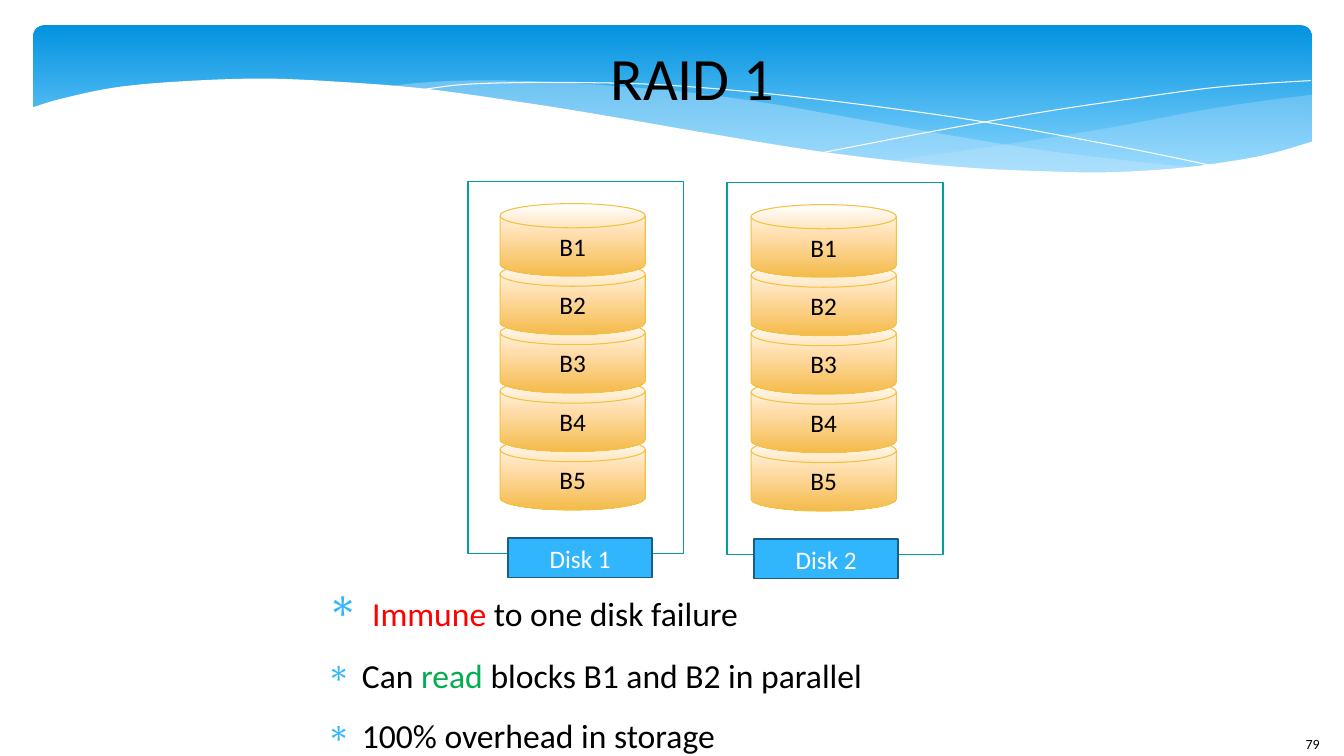
import pptx
import pptx.dml.color
import pptx.enum.shapes
import pptx.enum.text
import pptx.oxml
import pptx.oxml.ns
import pptx.util
from pptx.util import Inches

SHAPE = pptx.enum.shapes.MSO_SHAPE
ALIGN = pptx.enum.text.PP_ALIGN
ANCHOR = pptx.enum.text.MSO_ANCHOR
FONT = "Calibri"

VEILS = [
    (29, [[(12.68, .69), (12.13, .76), (11.55, .85), (10.77, 1), (10.05, 1.12), (9.39, 1.22),
           (8.49, 1.35)],
          [(8.49, 1.35), (9.07, 1.4), (9.76, 1.45), (10.38, 1.47), (10.93, 1.46), (11.53, 1.41),
           (12.05, 1.33), (12.68, 1.17)]]),
    (40, [[(11.57, 1.42), (10.83, 1.34), (10.01, 1.24), (9.08, 1.09), (8.06, .91), (7.26, .77),
           (6.53, .67), (5.86, .61), (5.27, .57), (4.73, .55), (4.26, .55), (3.85, .57), (3.49, .61)],
          [(3.49, .61), (4.23, .69), (5.06, .81), (5.66, .91), (6.73, 1.1), (7.69, 1.25),
           (8.54, 1.36), (9.3, 1.43), (9.97, 1.47), (10.57, 1.48), (11.1, 1.46), (11.57, 1.42)]]),
]
STRANDS = [
    [(3.79, .65), (4.25, .59), (4.83, .57), (5.44, .57), (6.19, .59), (7.09, .66), (8.15, .78),
     (9.37, .95), (10.75, 1.2), (11.77, 1.41)],
    [(7.85, 1.26), (8.94, 1.05), (10.02, .86), (10.82, .74), (11.61, .63), (12.17, .58), (12.67, .55)],
]
WAVE = [
    [(-.02, .82), (.28, .73), (.8, .62), (1.43, .56), (2.25, .53), (3, .56), (3.88, .63), (4.88, .77),
     (5.63, .89), (6.73, 1.08), (7.71, 1.24), (8.58, 1.35), (9.36, 1.42), (10.04, 1.45),
     (10.64, 1.46), (11.34, 1.42), (11.94, 1.34), (12.33, 1.26), (12.7, 1.15)],
    [(12.7, 1.99), (-.02, 1.99)],
]
POINTS = [
    [(" ", None, 32), ("Immune ", "FF0000", 24), ("to one disk failure", None, 24)],
    [("Can ", None, 24), ("read", "00B050", 24), (" blocks B1 and B2 in parallel", None, 24)],
    [("100% overhead in storage", None, 24)],
]


def rgb(value):
    """Turn a hex string into a colour."""
    return pptx.dml.color.RGBColor.from_string(value)


def fill_solid(shape, color, opacity=100):
    """Fill a shape with one colour, at a given opacity in percent."""
    shape.fill.solid()
    shape.fill.fore_color.rgb = rgb(color)
    if opacity < 100:
        tint = shape.element.spPr.find(".//" + pptx.oxml.ns.qn("a:srgbClr"))
        alpha = pptx.oxml.parse_xml(f'<a:alpha {pptx.oxml.ns.nsdecls("a")} val="{opacity * 1000}"/>')
        tint.append(alpha)


def fill_gradient(shape, stops):
    """Fill a shape from top to bottom with (percent, colour) stops."""
    shape.fill.gradient()
    shape.fill.gradient_angle = 270
    stop_list = shape.element.spPr.find(".//" + pptx.oxml.ns.qn("a:gsLst"))
    for old in list(stop_list):
        stop_list.remove(old)
    for percent, color in stops:
        stop_list.append(pptx.oxml.parse_xml(
            f'<a:gs {pptx.oxml.ns.nsdecls("a")} pos="{percent * 1000}"><a:srgbClr val="{color}"/></a:gs>'))


def outline(shape, color=None, width=0):
    """Set or remove the line of a shape and drop its shadow."""
    shape.shadow.inherit = False
    if color is None:
        shape.line.fill.background()
    else:
        shape.line.color.rgb = rgb(color)
        shape.line.width = pptx.util.Pt(width)


def style(paragraph, size, color="000000"):
    """Set the font of a whole paragraph."""
    paragraph.font.name = FONT
    paragraph.font.size = pptx.util.Pt(size)
    paragraph.font.color.rgb = rgb(color)


def add_preset(slide, kind, left, top, width, height):
    """Add a preset shape at a place in inches."""
    return slide.shapes.add_shape(kind, Inches(left), Inches(top), Inches(width), Inches(height))


def caption(shape, text, color):
    """Centre a label in a shape."""
    shape.text_frame.text = text
    shape.text_frame.vertical_anchor = ANCHOR.MIDDLE
    label = shape.text_frame.paragraphs[0]
    label.alignment = ALIGN.CENTER
    style(label, 18, color)


def smooth(knots, steps=6):
    """Run a Catmull-Rom curve through the knots."""
    padded = [knots[0], *knots, knots[-1]]
    curve = [knots[0]]
    for a, b, c, d in zip(padded, padded[1:], padded[2:], padded[3:]):
        for step in range(1, steps + 1):
            t = step / steps
            curve.append(tuple(
                (2 * q + (r - p) * t + (2 * p - 5 * q + 4 * r - s) * t ** 2
                 + (3 * q - p - 3 * r + s) * t ** 3) / 2
                for p, q, r, s in zip(a, b, c, d)))
    return curve


def add_curve(slide, left, top, curves, close=True):
    """Add an outline made of smooth curves, offset from the given corner."""
    spots = [(Inches(left + x), Inches(top + y)) for knots in curves for x, y in smooth(knots)]
    builder = slide.shapes.build_freeform(*spots[0])
    builder.add_line_segments(spots[1:], close=close)
    return builder.convert_to_shape()


def add_banner(slide, left, top, width, height):
    """Draw the blue banner with its veils, strands and white wave."""
    sky = add_preset(slide, SHAPE.ROUNDED_RECTANGLE, left, top, width, height)
    sky.adjustments[0] = 0.07
    fill_gradient(sky, [(0, "0293E0"), (90, "83D3FE")])
    outline(sky)
    for opacity, curves in VEILS:
        veil = add_curve(slide, left, top, curves)
        fill_solid(veil, "C6E7FC", opacity)
        outline(veil)
    for knots in STRANDS:
        strand = add_curve(slide, left, top, [knots], close=False)
        strand.fill.background()
        outline(strand, "FFFFFF")
    wave = add_curve(slide, left, top, WAVE)
    fill_solid(wave, "FFFFFF")
    outline(wave)


def add_title(slide, left, top, width, height):
    """Place the title in front of the banner."""
    title = slide.shapes.title
    title.element.getparent().append(title.element)
    title.left, title.top, title.width, title.height = map(Inches, (left, top, width, height))
    frame = title.text_frame
    frame.text = "RAID 1"
    frame.margin_left = frame.margin_right = frame.margin_top = frame.margin_bottom = 0
    frame.vertical_anchor = ANCHOR.MIDDLE
    frame.paragraphs[0].alignment = ALIGN.CENTER
    style(frame.paragraphs[0], 42.9)


def add_disk(slide, name, left, top, width, height, stack_inset, label_inset):
    """Draw a framed disk with its five blocks and name."""
    frame = add_preset(slide, SHAPE.FLOWCHART_PROCESS, left, top, width, height)
    fill_solid(frame, "FFFFFF")
    outline(frame, "049E9B", 1.25)
    for number in range(5, 0, -1):
        block = add_preset(slide, SHAPE.FLOWCHART_MAGNETIC_DISK, left + stack_inset,
                           top + 0.22 + 0.58 * (number - 1), 1.44, 0.72)
        fill_gradient(block, [(0, "FFFFFF"), (44, "FFDDAA"), (100, "F4BB4A")])
        outline(block, "F5C040", 0.75)
        caption(block, f"B{number}", "000000")
    plate = add_preset(slide, SHAPE.FLOWCHART_PROCESS, left + label_inset, top + height - 0.15, 1.43, 0.39)
    fill_solid(plate, "31B6FD")
    outline(plate, "195F84", 1.25)
    caption(plate, name, "FFFFFF")


def add_points(slide, left, top, width, height):
    """Write the bulleted remarks."""
    frame = slide.shapes.add_textbox(*map(Inches, (left, top, width, height))).text_frame
    frame.word_wrap = True
    frame.margin_left = frame.margin_right = frame.margin_top = frame.margin_bottom = 0
    for index, pieces in enumerate(POINTS):
        point = frame.add_paragraph() if index else frame.paragraphs[0]
        point.space_after = pptx.util.Pt(14.1)
        settings = point._p.get_or_add_pPr()
        settings.set("marL", str(Inches(0.47)))
        settings.set("indent", str(Inches(-0.35)))
        for bullet in ('<a:buClr {}><a:srgbClr val="31B6FD"/></a:buClr>', '<a:buChar {} char="∗"/>'):
            settings.append(pptx.oxml.parse_xml(bullet.format(pptx.oxml.ns.nsdecls("a"))))
        style(point, 24)
        for text, color, size in pieces:
            run = point.add_run()
            run.text = text
            run.font.size = pptx.util.Pt(size)
            if color:
                run.font.color.rgb = rgb(color)


def add_page_number(slide, left, top, width, height):
    """Write the page number."""
    frame = slide.shapes.add_textbox(*map(Inches, (left, top, width, height))).text_frame
    frame.word_wrap = True
    frame.text = "79"
    style(frame.paragraphs[0], 10)


def main():
    """Build the slide and save it."""
    deck = pptx.Presentation()
    deck.slide_width, deck.slide_height = Inches(13.33), Inches(7.5)
    slide = deck.slides.add_slide(deck.slide_layouts[5])
    add_banner(slide, 0.33, 0.25, 12.68, 1.56)
    add_title(slide, 2.81, 0.25, 8.11, 1.02)
    add_disk(slide, "Disk 1", 4.64, 1.8, 2.14, 3.69, 0.32, 0.4)
    add_disk(slide, "Disk 2", 7.21, 1.81, 2.14, 3.69, 0.24, 0.27)
    add_points(slide, 3.12, 5.77, 8.76, 1.51)
    add_page_number(slide, 12.85, 7.25, 0.82, 0.4)
    deck.save("out.pptx")


if __name__ == "__main__":
    main()
